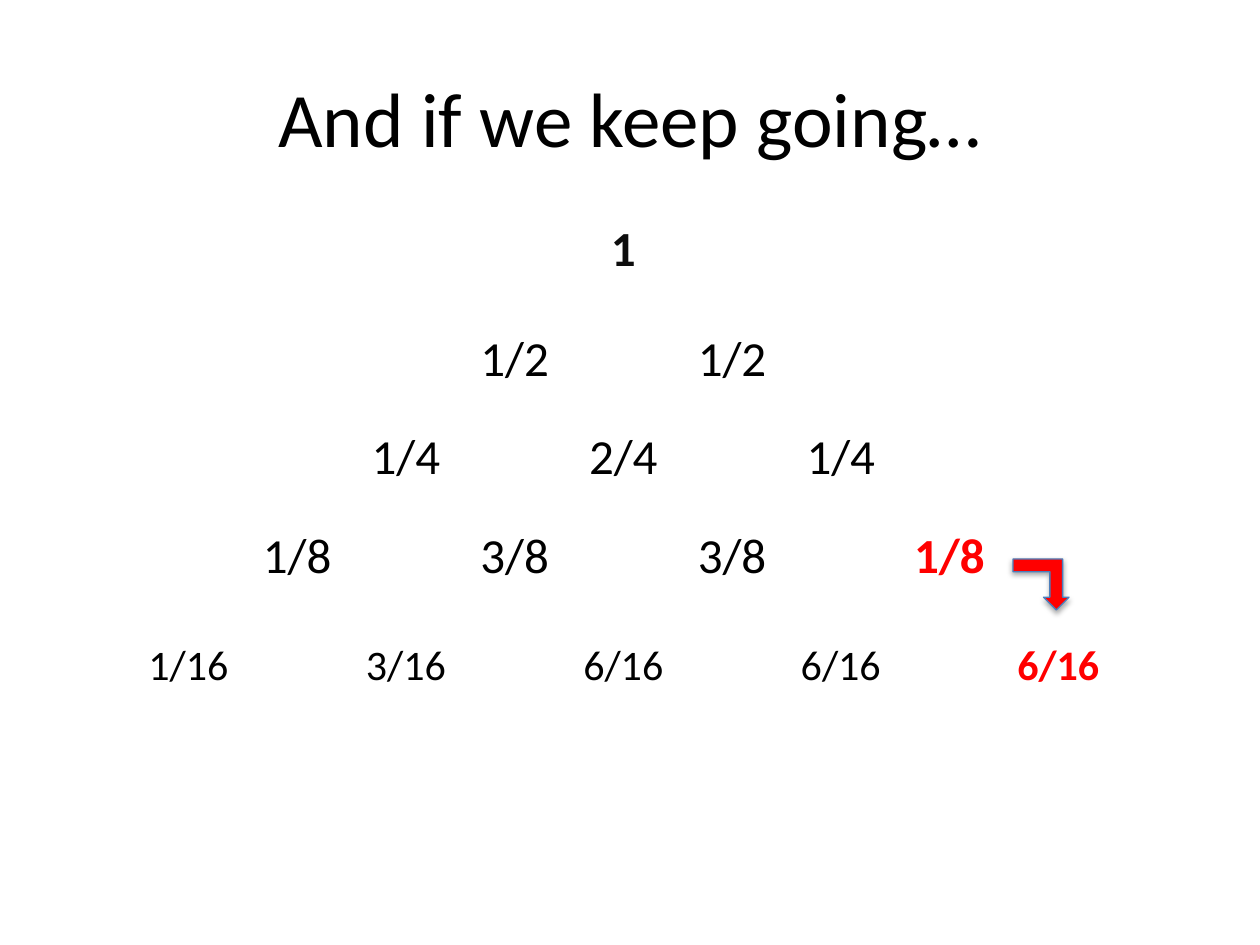
from dataclasses import dataclass

from lxml.etree import SubElement
from pptx import Presentation
from pptx.dml.color import RGBColor
from pptx.enum.shapes import MSO_SHAPE as Shape
from pptx.enum.text import MSO_ANCHOR as Anchor, PP_ALIGN as Align
from pptx.oxml.ns import qn
from pptx.util import Emu, Pt

# Content: each row of the triangle sits on every other column
TITLE = "And if we keep going…"
TRIANGLE = [
    ["1"],
    ["1/2", "1/2"],
    ["1/4", "2/4", "1/4"],
    ["1/8", "3/8", "3/8", "1/8"],
    ["1/16", "3/16", "6/16", "6/16", "6/16"],
]
HIGHLIGHTS = {(3, 3), (4, 4)}

# Geometry in px
SLIDE = (1260, 945)
TITLE_BOX = (63, 38, 1134, 157)
TABLE_BOX = (134, 195, 979, 526)
ROW_HEIGHTS = [110, 109, 88, 109, 110]
ARROW_BOX = (1013, 559, 56, 51)
COLUMNS = 2 * len(TRIANGLE) - 1


@dataclass(frozen=True)
class Theme:
    font: str = "Calibri"
    ink: str = "000000"
    apex: str = "0D0D0D"
    accent: str = "FF0000"
    outline: str = "4B7EBC"
    paper: str = "FFFFFF"
    title: int = 44
    entry: int = 28
    last_row: int = 24


THEME = Theme()


def px(value):
    return Emu(round(value * 914400 / 126))


def box(lengths):
    return [px(length) for length in lengths]


def write(frame, text, size, color, bold=False):
    paragraph = frame.paragraphs[0]
    paragraph.alignment = Align.CENTER
    run = paragraph.add_run()
    run.text = text
    run.font.name = THEME.font
    run.font.size = Pt(size)
    run.font.bold = bold
    run.font.color.rgb = RGBColor.from_string(color)


def add_color(parent, color):
    return SubElement(parent, qn("a:srgbClr"), val=color)


def style_cell(cell, row):
    cell.vertical_anchor = Anchor.MIDDLE
    properties = cell._tc.get_or_add_tcPr()
    for side in ("L", "R", "T", "B"):
        heavy = (row == 0 and side == "B") or (row == 1 and side == "T")
        border = SubElement(properties, qn(f"a:ln{side}"), w=str(Pt(3 if heavy else 1)))
        add_color(SubElement(border, qn("a:solidFill")), THEME.paper)
    cell.fill.solid()
    cell.fill.fore_color.rgb = RGBColor.from_string(THEME.paper)


def add_title(slide):
    frame = slide.shapes.add_textbox(*box(TITLE_BOX)).text_frame
    frame.word_wrap = True
    frame.vertical_anchor = Anchor.MIDDLE
    write(frame, TITLE, THEME.title, THEME.ink)


def add_triangle(slide):
    triangle = slide.shapes.add_table(len(TRIANGLE), COLUMNS, *box(TABLE_BOX)).table
    triangle.first_row = triangle.horz_banding = False
    for column in triangle.columns:
        column.width = px(TABLE_BOX[2] / COLUMNS)
    for row, height in enumerate(ROW_HEIGHTS):
        triangle.rows[row].height = px(height)
        for column in range(COLUMNS):
            style_cell(triangle.cell(row, column), row)

    last = len(TRIANGLE) - 1
    for row, entries in enumerate(TRIANGLE):
        size = THEME.last_row if row == last else THEME.entry
        for index, entry in enumerate(entries):
            marked = (row, index) in HIGHLIGHTS
            color = THEME.accent if marked else THEME.apex if row == 0 else THEME.ink
            cell = triangle.cell(row, last - row + 2 * index)
            write(cell.text_frame, entry, size, color, bold=marked or row == 0)


def add_arrow(slide):
    arrow = slide.shapes.add_shape(Shape.BENT_UP_ARROW, *box(ARROW_BOX))
    arrow.fill.solid()
    arrow.fill.fore_color.rgb = RGBColor.from_string(THEME.accent)
    arrow.line.color.rgb = RGBColor.from_string(THEME.outline)
    arrow.line.width = Pt(0.75)
    arrow.shadow.inherit = False

    # Turn the arrow downwards and give it a soft shadow
    properties = arrow._element.spPr
    properties.find(qn("a:xfrm")).set("flipV", "1")
    shadow = SubElement(
        properties.find(qn("a:effectLst")), qn("a:outerShdw"),
        blurRad=str(Pt(3.1)), dist=str(Pt(1.8)), dir="5400000", rotWithShape="0",
    )
    SubElement(add_color(shadow, THEME.ink), qn("a:alpha"), val="35000")


def main():
    deck = Presentation()
    deck.slide_width, deck.slide_height = box(SLIDE)
    slide = deck.slides.add_slide(deck.slide_layouts[6])
    add_title(slide)
    add_triangle(slide)
    add_arrow(slide)
    deck.save("out.pptx")


if __name__ == "__main__":
    main()
